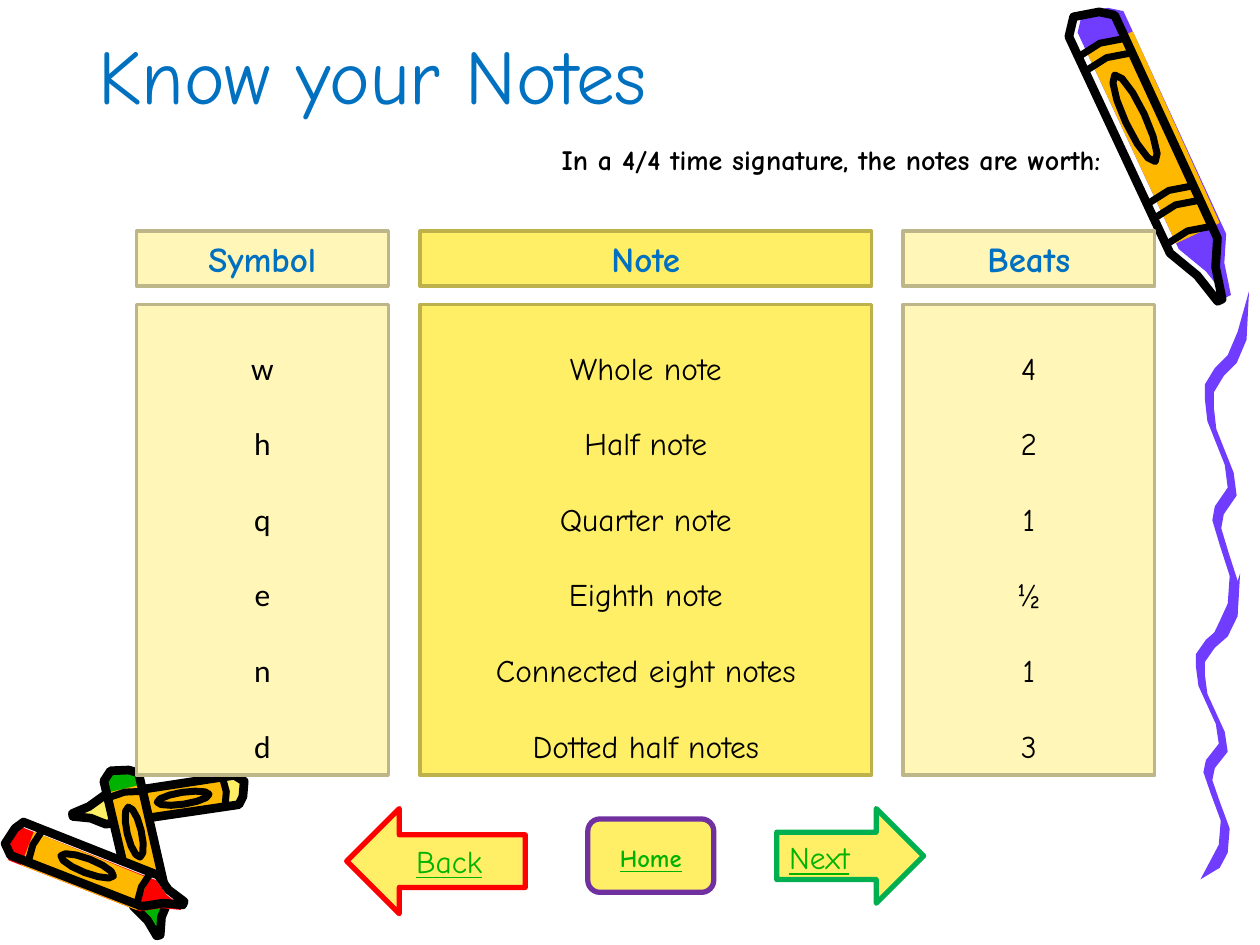
import math

import pptx
import pptx.dml.color
import pptx.enum.shapes
import pptx.enum.text
import pptx.util

Cm, Pt = pptx.util.Cm, pptx.util.Pt
SHAPE = pptx.enum.shapes.MSO_SHAPE
ALIGN = pptx.enum.text.PP_ALIGN
ANCHOR = pptx.enum.text.MSO_ANCHOR
AUTO_SIZE = pptx.enum.text.MSO_AUTO_SIZE

BLACK, WHITE, BLUE, GREEN, RED = "000000", "FFFFFF", "0070C0", "00B200", "FF0000"
PURPLE, ORANGE, YELLOW, CREAM = "703DFF", "FFB800", "FFEF66", "FFF6B8"


def color(value):
    return pptx.dml.color.RGBColor.from_string(value)


def write(box, lines, size, ink, align=ALIGN.CENTER, anchor=ANCHOR.TOP, font="Comic Neue",
          bold=False, underline=False, spacing=None):
    frame = box.text_frame
    frame.word_wrap = True
    frame.vertical_anchor = anchor
    for index, line in enumerate(lines):
        para = frame.add_paragraph() if index else frame.paragraphs[0]
        para.alignment = align
        if spacing:
            para.line_spacing = spacing
        span = para.add_run()
        span.text = line
        span.font.name = font
        span.font.size = Pt(size)
        span.font.bold = bold
        span.font.underline = underline
        span.font.color.rgb = color(ink)


deck = pptx.Presentation()
deck.slide_width, deck.slide_height = Cm(25.4), Cm(19.05)
page = deck.slides.add_slide(deck.slide_layouts[5])

# Every drawing is (points in cm, fill or None, line width in pt or 0)
drawings = []

# A crayon is described along its axis (0 blunt end, 1 tip) and across it (-1 to 1)
silhouette = [(0.05, -1), (0, -0.5), (0.02, 0.5), (0.05, 1), (0.82, 0.95), (0.9, 0.4),
              (1, 0.1), (1, -0.1), (0.9, -0.4), (0.8, -1)]
wrapper = [(0.12, -1), (0.12, 1), (0.78, 0.9), (0.78, -1)]

# Blunt end, tip, half width, wax colour, ring places, oval centre, sideways shift of the ink
crayons = [
    ((22.05, 0.15), (24.77, 5.97), 0.51, PURPLE, (0.12, 0.17, 0.63, 0.68, 0.77), 0.37, -0.38),
    ((4.95, 15.93), (1.47, 16.46), 0.3, YELLOW, (0.12, 0.77), 0.36, -0.1),
    ((2.44, 15.49), (3.23, 18.85), 0.36, GREEN, (0.15, 0.77), 0.38, -0.1),
    ((0.13, 16.94), (3.66, 18.31), 0.36, RED, (0.15, 0.77), 0.45, 0.3),
]
for blunt, tip, half_width, wax, rings, oval_centre, shift in crayons:
    run_x, run_y = tip[0] - blunt[0], tip[1] - blunt[1]
    length = math.hypot(run_x, run_y)
    side_x, side_y = run_y / length * half_width, -run_x / length * half_width

    turns = [math.radians(30 * step) for step in range(12)]
    oval = [(oval_centre + 0.15 * math.cos(turn), 0.4 * math.sin(turn)) for turn in turns]
    parts = [
        (silhouette, WHITE, 0, shift),
        (silhouette, wax, 0, 0),
        (wrapper, ORANGE, 0, 0),
        (silhouette + silhouette[:1], None, 5, shift),
        (oval + oval[:1], None, 4, shift),
    ]
    parts += [([(ring, -1), (ring - 0.01, 0), (ring + 0.01, 1)], None, 4, shift)
              for ring in rings]
    for part, fill, weight, offset in parts:
        points = [(blunt[0] + along * run_x + (across + offset) * side_x,
                   blunt[1] + along * run_y + (across + offset) * side_y)
                  for along, across in part]
        drawings.append((points, fill, weight))

# The squiggle is one wavy ribbon drawn twice, the lower one shortened
bends = [(0.9, 0), (0.76, 0.9), (0.56, 1.37), (0.3, 1.63), (0.1, 1.96), (0.1, 2.26),
         (0.15, 2.7), (0.5, 3.58), (0.56, 4.04), (0.3, 4.42), (0.25, 4.7), (0.4, 5.2),
         (0.6, 5.82), (0.56, 6.38), (0.4, 6.73), (0.1, 7.09)]
for left, top, stretch in ((24.1, 11.56, 0.87), (24.28, 5.87, 1)):
    centre = [(left + x, top + y * stretch) for x, y in bends]
    near_edge = [(x - 0.09, y - 0.08) for x, y in centre[1:-1]]
    far_edge = [(x + 0.09, y + 0.08) for x, y in centre[1:-1]]
    ribbon = centre[:1] + near_edge + centre[-1:] + far_edge[::-1]
    drawings.append((ribbon, PURPLE, 0))

for points, fill, weight in drawings:
    corners = [(Cm(x), Cm(y)) for x, y in points]
    builder = page.shapes.build_freeform(*corners[0])
    builder.add_line_segments(corners[1:], close=fill is not None)
    drawing = builder.convert_to_shape()
    drawing.shadow.inherit = False
    if fill:
        drawing.fill.solid()
        drawing.fill.fore_color.rgb = color(fill)
    else:
        drawing.fill.background()
    if weight:
        drawing.line.color.rgb = color(BLACK)
        drawing.line.width = Pt(weight)
    else:
        drawing.line.fill.background()

title = page.shapes.title
title.left, title.top, title.width, title.height = Cm(0), Cm(0), Cm(15.04), Cm(2.54)
write(title, ["Know your Notes"], 44, BLUE, anchor=ANCHOR.BOTTOM)

# Three columns, each a heading box above a list box
columns = [
    ("Symbol", 2.75, 5.08, CREAM, "BDB688", "Calibri", ["w", "h", "q", "e", "n", "d"]),
    ("Note", 8.47, 9.1, YELLOW, "BDB14B", "Comic Neue",
     ["Whole note", "Half note", "Quarter note", "Eighth note", "Connected eight notes",
      "Dotted half notes"]),
    ("Beats", 18.2, 5.08, CREAM, "BDB688", "Comic Neue", ["4", "2", "1", "½", "1", "3"]),
]
for heading, left, width, fill, edge, font, entries in columns:
    heading_style = {"size": 20, "ink": BLUE, "bold": True}
    list_style = {"size": 18, "ink": BLACK, "font": font, "spacing": 2.0}
    for top, height, lines, style in ((4.66, 1.11, [heading], heading_style),
                                      (6.14, 9.49, entries, list_style)):
        box = page.shapes.add_shape(SHAPE.RECTANGLE, Cm(left), Cm(top), Cm(width), Cm(height))
        box.shadow.inherit = False
        box.fill.solid()
        box.fill.fore_color.rgb = color(fill)
        box.line.color.rgb = color(edge)
        box.line.width = Pt(2)
        box.text_frame.auto_size = AUTO_SIZE.SHAPE_TO_FIT_TEXT
        write(box, lines, **style)

caption = page.shapes.add_textbox(Cm(6.56), Cm(2.75), Cm(15.88), Cm(0.94))
caption.text_frame.auto_size = AUTO_SIZE.SHAPE_TO_FIT_TEXT
write(caption, ["In a 4/4 time signature, the notes are worth:"], 16, BLACK,
      align=ALIGN.RIGHT, bold=True)

# Navigation buttons
buttons = [
    ("Next", SHAPE.RIGHT_ARROW, 15.66, 16.3, 2.96, 1.91, "00B050", 18,
     {"align": ALIGN.LEFT}),
    ("Home", SHAPE.FLOWCHART_ALTERNATE_PROCESS, 11.85, 16.51, 2.54, 1.48, "7030A0", 14,
     {"bold": True, "spacing": 1.5}),
    ("Back", SHAPE.LEFT_ARROW, 6.99, 16.3, 3.6, 2.12, RED, 18,
     {"anchor": ANCHOR.MIDDLE}),
]
for label, kind, left, top, width, height, edge, size, style in buttons:
    button = page.shapes.add_shape(kind, Cm(left), Cm(top), Cm(width), Cm(height))
    button.shadow.inherit = False
    button.fill.solid()
    button.fill.fore_color.rgb = color(YELLOW)
    button.line.color.rgb = color(edge)
    button.line.width = Pt(3)
    write(button, [label], size, GREEN, underline=True, **style)

deck.save("out.pptx")
